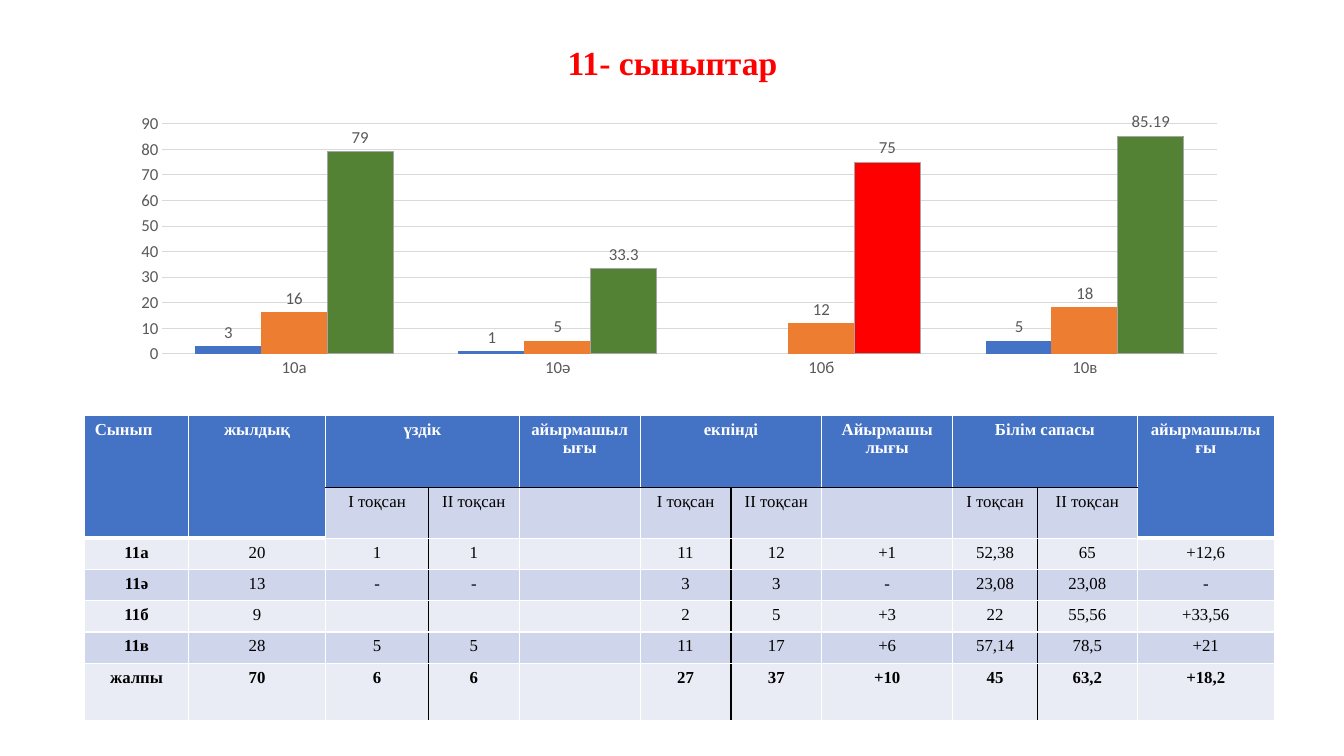
import dataclasses

import lxml.etree
import pptx
import pptx.chart.data
import pptx.dml.color
import pptx.enum.chart
import pptx.enum.text
import pptx.oxml
import pptx.oxml.ns
import pptx.util

Inches = pptx.util.Inches
Pt = pptx.util.Pt
Align = pptx.enum.text.PP_ALIGN


@dataclasses.dataclass(frozen=True)
class Theme:
    serif: str = "Times New Roman"
    sans: str = "Calibri"
    title: int = 24
    body: int = 12
    red: str = "FF0000"
    blue: str = "4472C4"
    orange: str = "ED7D31"
    green: str = "548235"
    silver: str = "A5A5A5"
    label: str = "595959"
    grid: str = "D9D9D9"
    dark: str = "CFD5EA"
    light: str = "E9EBF5"
    black: str = "000000"
    white: str = "FFFFFF"


CLASSES = ["10а", "10ә", "10б", "10в"]
COUNTS = [[3, 1, None, 5], [16, 5, 12, 18], [79, 33.3, 75, 85.19]]

WIDTHS = [1.03, 1.36, 1.02, 0.9, 1.2, 0.9, 0.9, 1.3, 0.84, 0.99, 1.36]
HEIGHTS = [0.72, 0.47, 0.31, 0.31, 0.31, 0.31, 0.57]
TERMS = ["І тоқсан", "ІІ тоқсан", ""]
ROWS = [
    ["Сынып", "жылдық", "үздік", "", "айырмашылығы", "екпінді", "",
     "Айырмашы\nлығы", "Білім сапасы", "", "айырмашылығы"],
    ["", ""] + TERMS * 3,
    ["11а", "20", "1", "1", "", "11", "12", "+1", "52,38", "65", "+12,6"],
    ["11ә", "13", "-", "-", "", "3", "3", "-", "23,08", "23,08", "-"],
    ["11б", "9", "", "", "", "2", "5", "+3", "22", "55,56", "+33,56"],
    ["11в", "28", "5", "5", "", "11", "17", "+6", "57,14", "78,5", "+21"],
    ["жалпы", "70", "6", "6", "", "27", "37", "+10", "45", "63,2", "+18,2"],
]
TALL = (0, 1, 10)   # header cells two rows high
PAIRS = (2, 5, 8)   # first column of each pair of terms


class Deck:
    def __init__(self, theme):
        self.theme = theme
        self.file = pptx.Presentation()
        self.file.slide_width = Inches(13.33)
        self.file.slide_height = Inches(7.5)
        self.slide = self.file.slides.add_slide(self.file.slide_layouts[6])

    def tint(self, code):
        return pptx.dml.color.RGBColor.from_string(code)

    def style(self, font, face, size, color, bold=False):
        font.name, font.size, font.bold = face, Pt(size), bold
        font.color.rgb = self.tint(color)

    def paint(self, form, fill, line):
        form.fill.solid()
        form.fill.fore_color.rgb = self.tint(fill)
        self.stroke(form.line, line)

    def stroke(self, line, color):
        line.color.rgb = self.tint(color)
        line.width = Pt(0.75)

    def title(self, text, *place):
        box = self.slide.shapes.add_textbox(*map(Inches, place))
        frame = box.text_frame
        frame.word_wrap = True
        frame.vertical_anchor = pptx.enum.text.MSO_ANCHOR.MIDDLE
        line = frame.paragraphs[0]
        line.text = text
        line.alignment = Align.CENTER
        line.line_spacing = 0.9
        self.style(line.font, self.theme.serif, self.theme.title, self.theme.red, True)

    def chart(self, names, values, colors, *place):
        """Draw clustered columns; colors holds a fill and a line per series."""
        theme = self.theme
        data = pptx.chart.data.CategoryChartData()
        data.categories = names
        for index, row in enumerate(values, 1):
            data.add_series(f"Series {index}", row)
        kind = pptx.enum.chart.XL_CHART_TYPE.COLUMN_CLUSTERED
        chart = self.slide.shapes.add_chart(kind, *map(Inches, place), data).chart
        chart.has_legend = chart.has_title = False
        self.style(chart.font, theme.sans, theme.body, theme.label)
        plot = chart.plots[0]
        plot.gap_width, plot.overlap = 100, 0
        plot.vary_by_categories = False
        for series, (fill, line) in zip(plot.series, colors):
            self.paint(series.format, fill, line)
            series.invert_if_negative = False
            labels = series.data_labels
            labels.show_value = True
            labels.position = pptx.enum.chart.XL_LABEL_POSITION.OUTSIDE_END
            self.style(labels.font, theme.sans, theme.body, theme.label)
        for axis in (chart.category_axis, chart.value_axis):
            axis.major_tick_mark = axis.minor_tick_mark = pptx.enum.chart.XL_TICK_MARK.NONE
            self.style(axis.tick_labels.font, theme.sans, theme.body, theme.label)
        self.stroke(chart.category_axis.format.line, theme.grid)
        scale = chart.value_axis
        scale.minimum_scale, scale.maximum_scale, scale.major_unit = 0, 90, 10
        scale.format.line.fill.background()
        self.stroke(scale.major_gridlines.format.line, theme.grid)
        return chart

    def inset(self, chart, *part):
        """Fix the inner plot area as shares of the chart: left, top, width, height."""
        qn = pptx.oxml.ns.qn
        area = chart.plots[0]._element.getparent()
        for old in area.findall(qn("c:layout")):
            area.remove(old)
        layout = lxml.etree.Element(qn("c:layout"))
        area.insert(0, layout)
        manual = lxml.etree.SubElement(layout, qn("c:manualLayout"))
        items = [("layoutTarget", "inner"), ("xMode", "edge"), ("yMode", "edge")]
        for tag, value in items + list(zip("xywh", part)):
            lxml.etree.SubElement(manual, qn(f"c:{tag}")).set("val", str(value))

    def border(self, cell, side, color, width):
        props = cell._tc.get_or_add_tcPr()
        space = pptx.oxml.ns.nsdecls("a")
        props.append(pptx.oxml.parse_xml(
            f'<a:ln{side} {space} w="{Pt(width)}"><a:solidFill>'
            f'<a:srgbClr val="{color}"/></a:solidFill></a:ln{side}>'))

    def cell(self, cell, text, fill, ink, bold, edges):
        for side, (color, width) in edges.items():
            self.border(cell, side, color, width)
        cell.fill.solid()
        cell.fill.fore_color.rgb = self.tint(fill)
        cell.text = text
        for line in cell.text_frame.paragraphs:
            line.alignment = Align.CENTER
            self.style(line.font, self.theme.serif, self.theme.body, ink, bold)
            if not text:
                end = lxml.etree.SubElement(line._p, pptx.oxml.ns.qn("a:endParaRPr"))
                end.set("sz", str(self.theme.body * 100))

    def edges(self, row, col):
        """Give each side its colour and width: black in pairs and under the header."""
        theme = self.theme
        tall = col in TALL
        thin, dark = (theme.white, 1), (theme.black, 1)
        thick = (theme.white, 3)
        below = thick if row < 2 and tall else dark if row == 0 else thin
        return {
            "L": dark if row and col - 1 in PAIRS else thin,
            "R": dark if row and col in PAIRS else thin,
            "T": dark if row == 1 and not tall else thin,
            "B": below,
        }

    def table(self, rows, widths, heights, left, top):
        theme = self.theme
        place = map(Inches, (left, top, sum(widths), sum(heights)))
        table = self.slide.shapes.add_table(len(rows), len(widths), *place).table
        table.first_row = table.horz_banding = False
        for col, width in zip(table.columns, widths):
            col.width = Inches(width)
        for row, height in zip(table.rows, heights):
            row.height = Inches(height)
        for r, row in enumerate(rows):
            for c, text in enumerate(row):
                head = r == 0 or r == 1 and c in TALL
                fill = theme.blue if head else theme.dark if r % 2 else theme.light
                ink = theme.white if head else theme.black
                bold = head or r == len(rows) - 1 or c == 0
                self.cell(table.cell(r, c), text, fill, ink, bold, self.edges(r, c))
        table.cell(0, 0).text_frame.paragraphs[0].alignment = Align.LEFT
        for c in TALL:
            table.cell(0, c).merge(table.cell(1, c))
        for c in PAIRS:
            table.cell(0, c).merge(table.cell(0, c + 1))


def main():
    theme = Theme()
    deck = Deck(theme)
    deck.title("11- сыныптар", 0.92, 0.4, 11.5, 0.48)
    deck.table(ROWS, WIDTHS, HEIGHTS, 0.84, 4.12)
    colors = [(theme.blue, theme.blue), (theme.orange, theme.orange),
              (theme.green, theme.silver)]
    chart = deck.chart(CLASSES, COUNTS, colors, 0.59, 0.88, 12.16, 2.88)
    deck.inset(chart, 0.084, 0.121, 0.86, 0.793)
    point = chart.plots[0].series[2].points[CLASSES.index("10б")]
    deck.paint(point.format, theme.red, theme.silver)
    deck.file.save("out.pptx")


if __name__ == "__main__":
    main()
